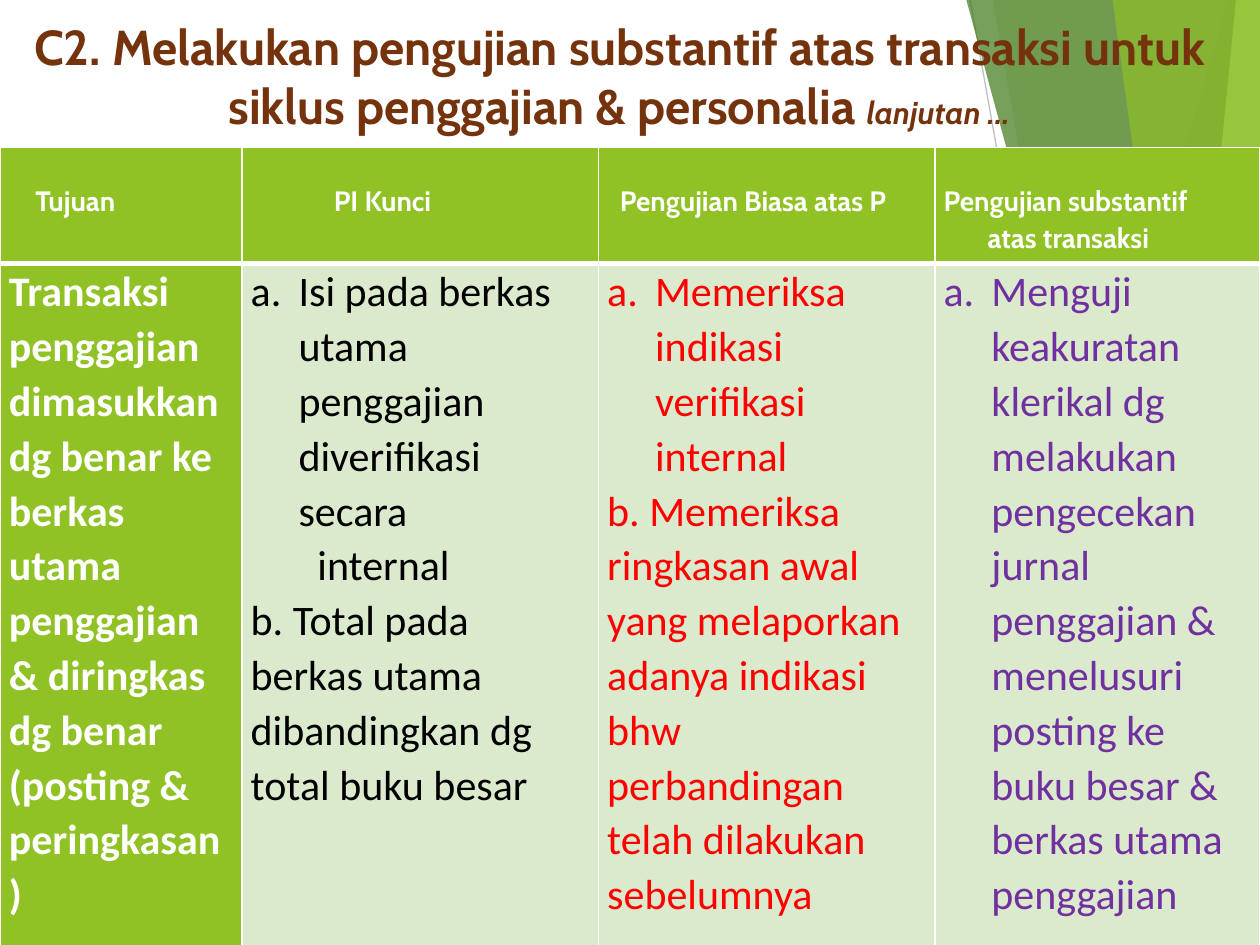
from lxml import etree
from pptx import Presentation
from pptx.dml.color import RGBColor
from pptx.enum.shapes import MSO_CONNECTOR
from pptx.enum.text import MSO_ANCHOR, MSO_AUTO_SIZE, PP_ALIGN
from pptx.oxml import parse_xml
from pptx.oxml.ns import nsdecls, qn
from pptx.util import Inches, Pt

WHITE = RGBColor(0xFF, 0xFF, 0xFF)
BLACK = RGBColor(0, 0, 0)
RED = RGBColor(0xFF, 0, 0)
PURPLE = RGBColor(0x70, 0x30, 0xA0)
BROWN = RGBColor(0x74, 0x33, 0x0C)
GRAY = RGBColor(0xBF, 0xBF, 0xBF)
GREEN = RGBColor(0x90, 0xC2, 0x26)
DARK_GREEN = RGBColor(0x3F, 0x78, 0x19)
LIME = RGBColor(0xC0, 0xE4, 0x74)
PALE_GREEN = RGBColor(0xDB, 0xE9, 0xCD)


def add_text(para, text, size=24, font="Calibri", color=BLACK, bold=False, italic=False):
    span = para.add_run()
    span.text = text
    span.font.size = Pt(size)
    span.font.name = font
    span.font.color.rgb = color
    span.font.bold = bold
    span.font.italic = italic


def set_borders(cell, bottom):
    """Draw white cell borders, 1 pt wide except for the bottom one."""
    widths = {"lnL": 1, "lnR": 1, "lnT": 1, "lnB": bottom}
    properties = cell._tc.get_or_add_tcPr()
    for position, (side, width) in enumerate(widths.items()):
        properties.insert(position, parse_xml(
            f'<a:{side} {nsdecls("a")} w="{Pt(width)}"><a:solidFill>'
            f'<a:srgbClr val="{WHITE}"/></a:solidFill></a:{side}>'))


deck = Presentation()
deck.slide_width, deck.slide_height = Inches(10), Inches(7.5)
page = deck.slides.add_slide(deck.slide_layouts[5])

# Decorative facets on the right
edge = page.shapes.add_connector(
    MSO_CONNECTOR.STRAIGHT, Inches(7.7), 0, Inches(9.04), Inches(7.5))
edge.line.color.rgb = GRAY
edge.line.width = Pt(0.75)
etree.SubElement(edge.element.spPr, qn("a:effectLst"))

# Top x, bottom x, colour, opacity in percent
facets = [
    (9.75, 7.54, GREEN, 30),
    (7.88, 9.19, GREEN, 20),
    (7.67, 9.7, DARK_GREEN, 70),
    (9.81, 9.07, LIME, 70),
    (8.83, 9.86, GREEN, 65),
]
for top_x, bottom_x, color, opacity in facets:
    builder = page.shapes.build_freeform(Inches(top_x), 0)
    builder.add_line_segments([
        (Inches(bottom_x), Inches(7.5)), (Inches(10), Inches(7.5)), (Inches(10), 0)])
    facet = builder.convert_to_shape()
    facet.shadow.inherit = False
    facet.line.fill.background()
    facet.fill.solid()
    facet.fill.fore_color.rgb = color
    tint = facet.element.spPr.find(f'{qn("a:solidFill")}/{qn("a:srgbClr")}')
    etree.SubElement(tint, qn("a:alpha"), val=str(opacity * 1000))

# Title, brought in front of the facets
title = page.shapes.title
title.element.getparent().append(title.element)
title.left, title.top = 0, Inches(0.08)
title.width, title.height = Inches(9.83), Inches(1.08)
frame = title.text_frame
frame.word_wrap = True
frame.auto_size = MSO_AUTO_SIZE.NONE
frame.vertical_anchor = MSO_ANCHOR.TOP
para = frame.paragraphs[0]
para.alignment = PP_ALIGN.CENTER
add_text(para, "C2. Melakukan pengujian substantif atas transaksi untuk "
         "siklus penggajian & personalia ", size=28, font="Cabin", color=BROWN, bold=True)
add_text(para, "lanjutan ...", size=18, font="Cabin", color=BROWN, bold=True, italic=True)

# Table: each paragraph is (text, left indent, numbered)
columns = [
    (1.92, 0.28, [("Tujuan", 0, False)], WHITE, [
        ("Transaksi penggajian dimasukkan dg benar ke berkas utama penggajian "
         "& diringkas dg benar (posting & peringkasan)", 0, False)]),
    (2.83, 0.73, [("PI Kunci", 0, False)], BLACK, [
        ("Isi pada berkas utama penggajian diverifikasi secara", 0.38, True),
        ("internal", 0.53, False),
        ("b. Total pada berkas utama dibandingkan dg total buku besar", 0, False)]),
    (2.67, 0.17, [("Pengujian Biasa atas P", 0, False)], RED, [
        ("Memeriksa indikasi verifikasi internal", 0.38, True),
        ("b. Memeriksa ringkasan awal yang melaporkan adanya indikasi bhw "
         "perbandingan telah dilakukan sebelumnya", 0, False)]),
    (2.58, 0.07, [("Pengujian substantif", 0, False), ("atas transaksi", 0.35, False)],
     PURPLE, [
        ("Menguji keakuratan klerikal dg melakukan pengecekan jurnal penggajian "
         "& menelusuri posting ke buku besar & berkas utama penggajian", 0.38, True)]),
]
table = page.shapes.add_table(
    2, len(columns), 0, Inches(1.17), Inches(10), Inches(6.44)).table
table.rows[0].height = Inches(0.92)
table.rows[1].height = Inches(5.52)

for column, (width, header_left, header, color, body) in enumerate(columns):
    table.columns[column].width = Inches(width)
    header_style = dict(size=16, font="Cabin", color=WHITE, bold=True)
    body_style = dict(color=color, bold=column == 0)
    rows = [(header, header_style, header_left, 0.28, 3), (body, body_style, 0.07, 0, 1)]
    for row, (paragraphs, style, left, top, bottom_border) in enumerate(rows):
        cell = table.cell(row, column)
        cell.margin_left, cell.margin_right = Inches(left), Inches(0.07)
        cell.margin_top, cell.margin_bottom = Inches(top), 0
        cell.fill.solid()
        cell.fill.fore_color.rgb = GREEN if row == 0 or column == 0 else PALE_GREEN
        set_borders(cell, bottom_border)
        for number, (text, indent, numbered) in enumerate(paragraphs):
            frame = cell.text_frame
            para = frame.add_paragraph() if number else frame.paragraphs[0]
            para.line_spacing = 1.07
            add_text(para, text, **style)
            if indent:
                properties = para._p.get_or_add_pPr()
                properties.set("marL", str(Inches(indent)))
                properties.set("indent", str(-Inches(indent) if numbered else 0))
                if numbered:
                    etree.SubElement(properties, qn("a:buAutoNum"), type="alphaLcPeriod")

deck.save("out.pptx")
